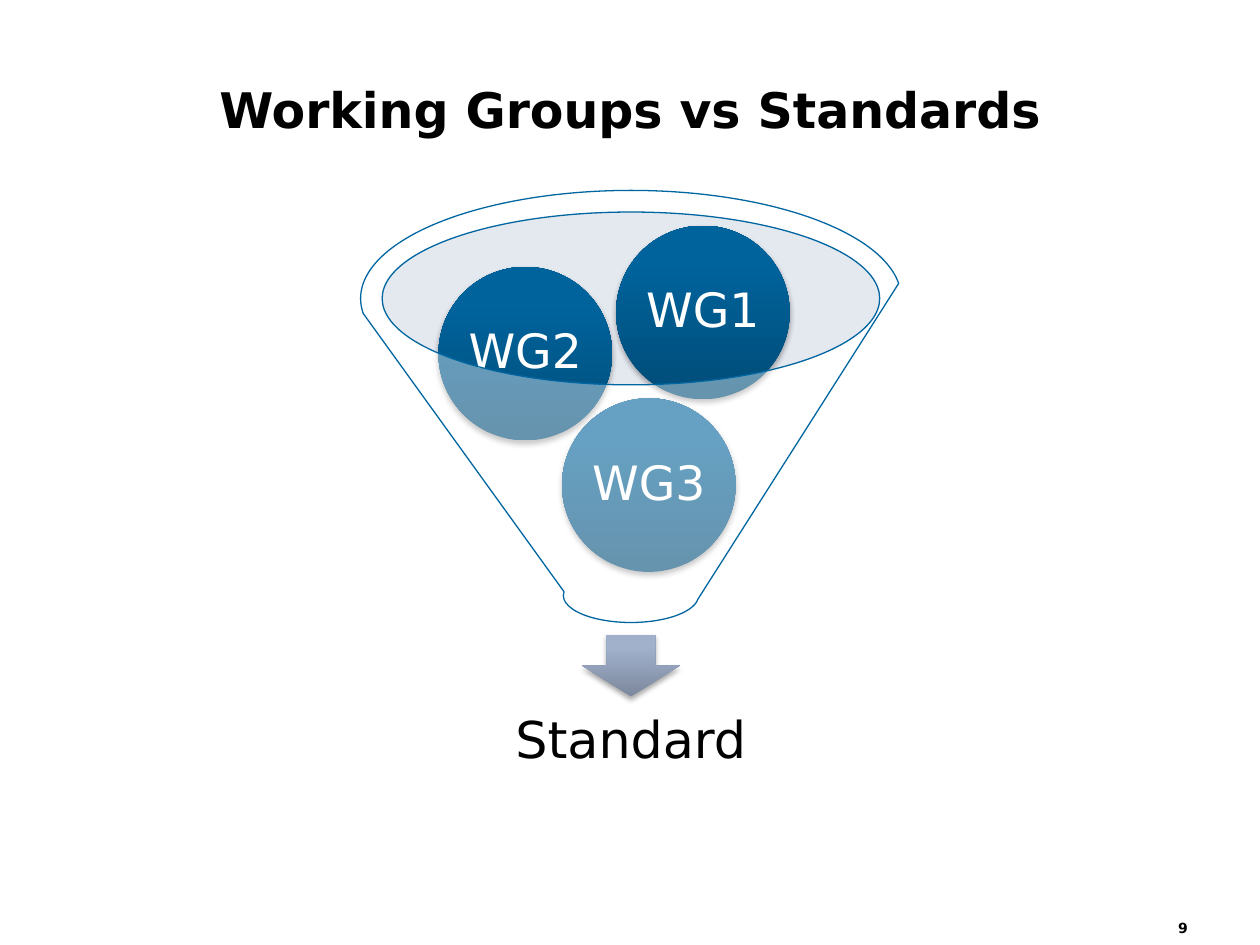
from lxml import etree
from pptx import Presentation
from pptx.dml.color import RGBColor
from pptx.enum.shapes import MSO_SHAPE
from pptx.enum.text import MSO_ANCHOR, PP_ALIGN
from pptx.oxml import parse_xml
from pptx.oxml.ns import nsdecls, qn
from pptx.util import Cm, Pt

ELLIPSE, ARROW, FUNNEL = MSO_SHAPE.OVAL, MSO_SHAPE.DOWN_ARROW, MSO_SHAPE.FUNNEL
LEFT, CENTER = PP_ALIGN.LEFT, PP_ALIGN.CENTER
TOP, MIDDLE, BOTTOM = MSO_ANCHOR.TOP, MSO_ANCHOR.MIDDLE, MSO_ANCHOR.BOTTOM
FONT = "DejaVu Sans"

# Content, lengths in cm
TITLE, RESULT, PAGE = "Working Groups vs Standards", "Standard", "9"
GROUPS = [("WG3", 11.33, 8.03), ("WG2", 8.84, 5.38), ("WG1", 12.42, 4.55)]
BALL = 3.5
AXIS = 12.72  # vertical axis of the funnel
BALL_STOPS = [(0, "004C78"), (80, "00639C"), (100, "00639D")]
ARROW_STOPS = [(0, "7C889D"), (80, "A1B1CC"), (100, "A1B2CE")]


def rgb(value):
    return RGBColor.from_string(value)


def write(shape, text, size, color="000000", bold=False, align=CENTER,
          anchor=MIDDLE, inset=0, spacing=None, wrap=True):
    tf = shape.text_frame
    tf.word_wrap, tf.vertical_anchor = wrap, anchor
    if inset is not None:
        tf.margin_left = tf.margin_right = Cm(inset)
        tf.margin_top = tf.margin_bottom = Cm(inset)
    p = tf.paragraphs[0]
    p.text, p.alignment, p.line_spacing = text, align, spacing
    p.font.name, p.font.size, p.font.bold = FONT, Pt(size), bold
    p.font.color.rgb = rgb(color)


def add_box(x, y, w, h, text, size, **style):
    write(s.shapes.add_textbox(Cm(x), Cm(y), Cm(w), Cm(h)), text, size, **style)


def add_shape(kind, x, y, w, h):
    sp = s.shapes.add_shape(kind, Cm(x), Cm(y), Cm(w), Cm(h))
    sp.shadow.inherit = False
    sp.line.fill.background()
    return sp


def fill_clear(sp, color, opacity):
    sp.fill.solid()
    sp.fill.fore_color.rgb = rgb(color)
    clr = sp.fill._xPr.find(qn("a:solidFill"))[0]
    etree.SubElement(clr, qn("a:alpha")).set("val", str(opacity * 1000))


def fill_gradient(sp, stops):
    """Vertical gradient running upwards, with a soft shadow below."""
    sp.fill.gradient()
    sp.fill.gradient_angle = 90
    props = sp._element.spPr
    gs_list = props.find(qn("a:gradFill")).find(qn("a:gsLst"))
    for gs in list(gs_list):
        gs_list.remove(gs)
    for pos, color in stops:
        gs = etree.SubElement(gs_list, qn("a:gs"), pos=str(pos * 1000))
        etree.SubElement(gs, qn("a:srgbClr"), val=color)
    props.find(qn("a:effectLst")).append(parse_xml(
        f'<a:outerShdw {nsdecls("a")} blurRad="40000" dist="23000" dir="5400000" '
        'rotWithShape="0"><a:srgbClr val="000000"><a:alpha val="35000"/>'
        '</a:srgbClr></a:outerShdw>'))


prs = Presentation()
prs.slide_width, prs.slide_height = Cm(25.4), Cm(19.05)
s = prs.slides.add_slide(prs.slide_layouts[6])

# Title and page number
add_box(1.9, 0.66, 21.6, 2.13, TITLE, 28, bold=True, anchor=BOTTOM)
add_box(23.5, 18.42, 1.22, 0.64, PAGE, 8, bold=True, align=LEFT, anchor=TOP,
        inset=None)

# Funnel mouth, arrow and result
mouth = add_shape(ELLIPSE, AXIS - 10.06 / 2, 4.27, 10.06, 3.48)
fill_clear(mouth, "BDC6D7", 40)
arrow = add_shape(ARROW, AXIS - 1.96 / 2, 12.8, 1.96, 1.24)
fill_gradient(arrow, ARROW_STOPS)
add_box(AXIS - 9.35 / 2, 13.79, 9.35, 2.34, RESULT, 29, inset=0.58, spacing=0.9)

# Working groups
for name, x, y in GROUPS:
    ball = add_shape(ELLIPSE, x, y, BALL, BALL)
    fill_gradient(ball, BALL_STOPS)
    write(ball, name, 27, color="FFFFFF", inset=0.1, spacing=0.9, wrap=False)

# Translucent funnel in front of the groups
funnel = add_shape(FUNNEL, AXIS - 10.9 / 2, 3.84, 10.9, 8.71)
fill_clear(funnel, "FFFFFF", 40)
funnel.line.color.rgb = rgb("0066A1")
funnel.line.width = Pt(0.75)

prs.save("out.pptx")
